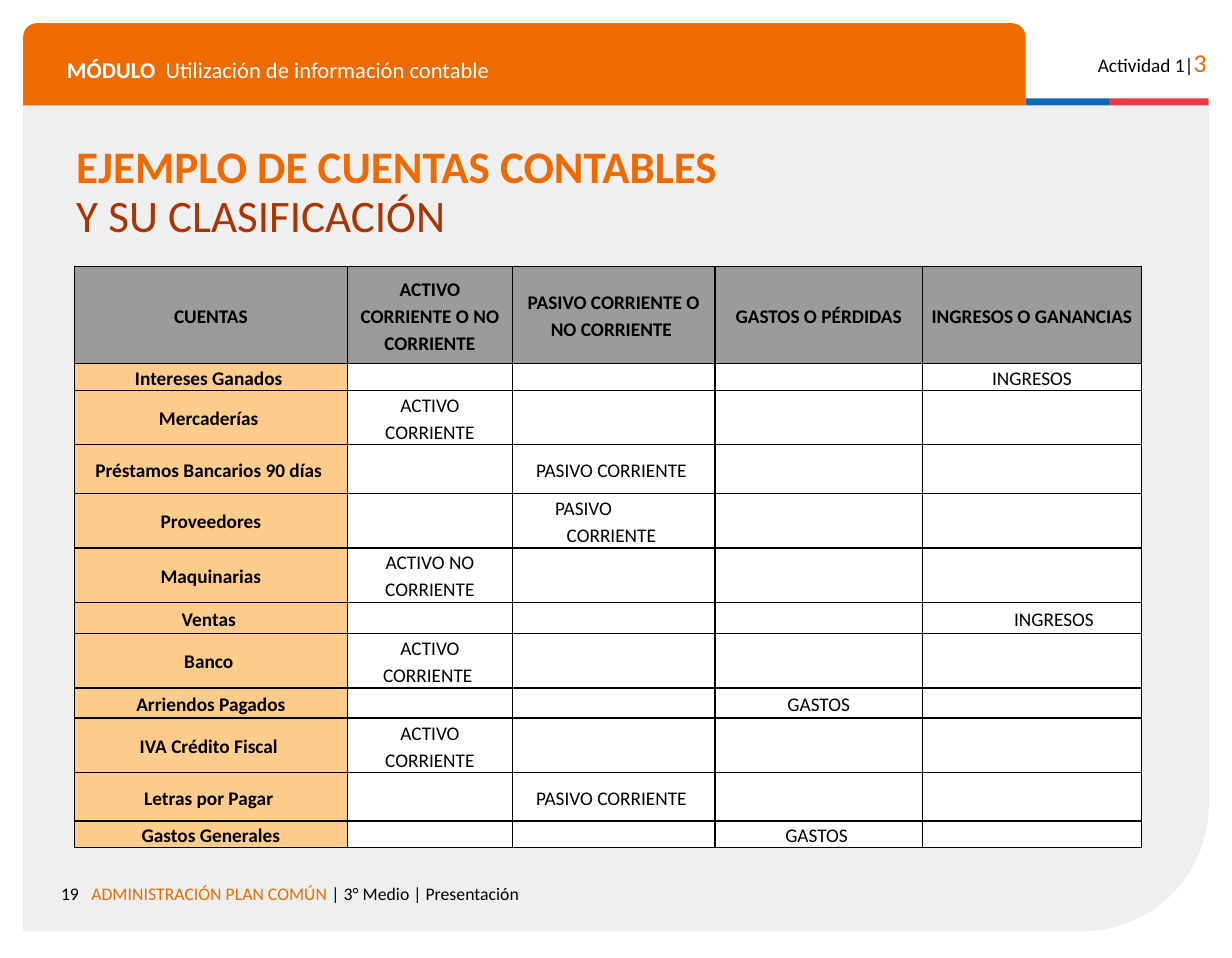
from dataclasses import dataclass
from typing import Any, Optional

from lxml import etree
from pptx import Presentation
from pptx import util as u
from pptx.dml import color
from pptx.enum import shapes, text
from pptx.oxml import ns

HUES = {
    "paper": "EFEFEF", "orange": "ED6B00", "rust": "A93501", "blue": "0F69B4",
    "red": "EB3C46", "black": "000000", "white": "FFFFFF", "gray": "9B9B9B",
    "peach": "FFCC8B",
}
LEFT, MID, RIGHT = text.PP_ALIGN.LEFT, text.PP_ALIGN.CENTER, text.PP_ALIGN.RIGHT
KINDS = shapes.MSO_SHAPE


@dataclass
class Panel:
    kind: Any
    box: tuple
    hue: str
    bends: tuple = ()
    turned: bool = False


@dataclass
class Run:
    words: str
    size: float
    hue: str
    bold: bool = False


@dataclass
class Label:
    box: tuple
    runs: tuple
    align: Any = LEFT
    space: float = 1.0
    pad: float = 0.1
    inset: float = 0


@dataclass
class Entry:
    words: str
    align: Any = MID
    inset: float = 0
    hang: float = 0


@dataclass
class Row:
    name: str
    high: float
    col: int
    entry: Entry


PANELS = (
    Panel(KINDS.ROUND_1_RECTANGLE, (0.2, 0.9, 10.23, 7.14), "paper", (0.153,), True),
    Panel(KINDS.ROUND_2_SAME_RECTANGLE, (0.2, 0.2, 8.65, 0.71), "orange", (0.167, 0)),
    Panel(KINDS.RECTANGLE, (8.85, 0.85, 0.72, 0.06), "blue"),
    Panel(KINDS.RECTANGLE, (9.57, 0.85, 0.86, 0.06), "red"),
)
LABELS = (
    Label((0.2, 7.53, 0.58, 0.29), (Run("19", 11, "black"),), RIGHT),
    Label((0.41, 7.53, 7.42, 0.38), (
        Run("ADMINISTRACIÓN PLAN COMÚN ", 11, "orange"),
        Run("| 3° Medio | Presentación", 11, "black")), inset=0.28),
    Label((0.48, 0.38, 8.14, 0.35), (
        Run("MÓDULO", 14, "white", True),
        Run("  Utilización de información contable", 14, "white"))),
    Label((9.23, 0.3, 1.28, 0.38), (
        Run("Actividad 1|", 12, "black"), Run("3", 16, "orange")), RIGHT),
    Label((0.56, 1.2, 9.37, 2.06), (
        Run("EJEMPLO DE CUENTAS CONTABLES \v", 28, "orange", True),
        Run("Y SU CLASIFICACIÓN", 28, "rust")), space=0.9, pad=0.05),
)
WIDTHS = (2.36, 1.42, 1.75, 1.79, 1.89)
HEADS = ("CUENTAS", "ACTIVO CORRIENTE O NO CORRIENTE", "PASIVO CORRIENTE O NO CORRIENTE ",
         "GASTOS O PÉRDIDAS", "INGRESOS O GANANCIAS")
HEAD_HIGH = 0.84
ROWS = (
    Row("Intereses Ganados ", 0.23, 4, Entry("INGRESOS")),
    Row("Mercaderías ", 0.47, 1, Entry("ACTIVO CORRIENTE")),
    Row("Préstamos Bancarios 90 días ", 0.42, 2, Entry("PASIVO CORRIENTE ")),
    Row("Proveedores", 0.47, 2, Entry("PASIVO\vCORRIENTE ", LEFT, 0.4, -0.1)),
    Row("Maquinarias", 0.47, 1, Entry("ACTIVO NO CORRIENTE")),
    Row("Ventas ", 0.27, 4, Entry("INGRESOS", inset=0.38)),
    Row("Banco ", 0.47, 1, Entry("ACTIVO CORRIENTE ")),
    Row("Arriendos Pagados", 0.26, 3, Entry("GASTOS")),
    Row("IVA Crédito Fiscal ", 0.47, 1, Entry("ACTIVO CORRIENTE")),
    Row("Letras por Pagar ", 0.42, 2, Entry("PASIVO CORRIENTE ")),
    Row("Gastos Generales", 0.23, 3, Entry("GASTOS ")),
)


def apply(item: Any, form: dict) -> None:
    for key, value in form.items():
        setattr(item, key, value)


def paint(fill: Any, hue: str) -> None:
    fill.solid()
    fill.fore_color.rgb = color.RGBColor.from_string(HUES[hue])


def indent(para: Any, inset: float, hang: float = 0) -> None:
    props = para._p.get_or_add_pPr()
    props.set("marL", str(u.Inches(inset)))
    props.set("indent", str(u.Inches(hang)))


def write(para: Any, run: Run) -> None:
    for spot, line in enumerate(run.words.split("\v")):
        if spot:
            para.add_line_break()
        if line:
            part = para.add_run()
            part.text = line
            apply(part.font, {"name": "Calibri", "size": u.Pt(run.size), "bold": run.bold})
            paint(part.font.fill, run.hue)


def draw_panel(slide: Any, panel: Panel) -> None:
    shape = slide.shapes.add_shape(panel.kind, *map(u.Inches, panel.box))
    shape.shadow.inherit = False
    paint(shape.fill, panel.hue)
    shape.line.fill.background()
    for spot, bend in enumerate(panel.bends):
        shape.adjustments[spot] = bend
    if panel.turned:
        shape.rotation = 180
        shape._element.spPr.xfrm.set("flipH", "1")


def draw_label(slide: Any, label: Label) -> None:
    frame = slide.shapes.add_textbox(*map(u.Inches, label.box)).text_frame
    apply(frame, {
        "word_wrap": True, "margin_left": u.Inches(0.1), "margin_right": u.Inches(0.1),
        "margin_top": u.Inches(label.pad), "margin_bottom": u.Inches(label.pad)})
    para = frame.paragraphs[0]
    apply(para, {"alignment": label.align, "line_spacing": label.space})
    if label.inset:
        indent(para, label.inset)
    for run in label.runs:
        write(para, run)


def edge(cell: Any) -> None:
    props = cell._tc.get_or_add_tcPr()
    for spot, side in enumerate(("lnL", "lnR", "lnT", "lnB")):
        line = etree.Element(ns.qn(f"a:{side}"), w=str(u.Pt(1)))
        fill = etree.SubElement(line, ns.qn("a:solidFill"))
        etree.SubElement(fill, ns.qn("a:srgbClr"), val=HUES["black"])
        props.insert(spot, line)


def fill_cell(cell: Any, hue: str, entry: Optional[Entry], bold: bool) -> None:
    apply(cell, {
        "vertical_anchor": text.MSO_ANCHOR.MIDDLE, "margin_top": 0, "margin_bottom": 0,
        "margin_left": u.Inches(0.07), "margin_right": u.Inches(0.07)})
    paint(cell.fill, hue)
    edge(cell)
    para = cell.text_frame.paragraphs[0]
    if entry is None:
        etree.SubElement(para._p, ns.qn("a:endParaRPr"), sz="1000")
        return
    apply(para, {"alignment": entry.align, "line_spacing": 1.15})
    if entry.inset:
        indent(para, entry.inset, entry.hang)
    write(para, Run(entry.words, 12, "black", bold))


def draw_table(slide: Any) -> None:
    highs = (HEAD_HIGH, *(row.high for row in ROWS))
    box = (0.64, 2.3, sum(WIDTHS), sum(highs))
    table = slide.shapes.add_table(len(highs), len(WIDTHS), *map(u.Inches, box)).table
    apply(table, {"first_row": False, "horz_banding": False})
    for col, width in zip(table.columns, WIDTHS):
        col.width = u.Inches(width)
    for line, high in zip(table.rows, highs):
        line.height = u.Inches(high)
    for col, head in enumerate(HEADS):
        fill_cell(table.cell(0, col), "gray", Entry(head), True)
    for spot, row in enumerate(ROWS, 1):
        fill_cell(table.cell(spot, 0), "peach", Entry(row.name), True)
        for col in range(1, len(WIDTHS)):
            entry = row.entry if col == row.col else None
            fill_cell(table.cell(spot, col), "white", entry, False)


def main() -> None:
    deck = Presentation()
    apply(deck, {"slide_width": u.Inches(10.63), "slide_height": u.Inches(8.27)})
    slide = deck.slides.add_slide(deck.slide_layouts[6])
    for panel in PANELS:
        draw_panel(slide, panel)
    for label in LABELS:
        draw_label(slide, label)
    draw_table(slide)
    deck.save("out.pptx")


if __name__ == "__main__":
    main()
